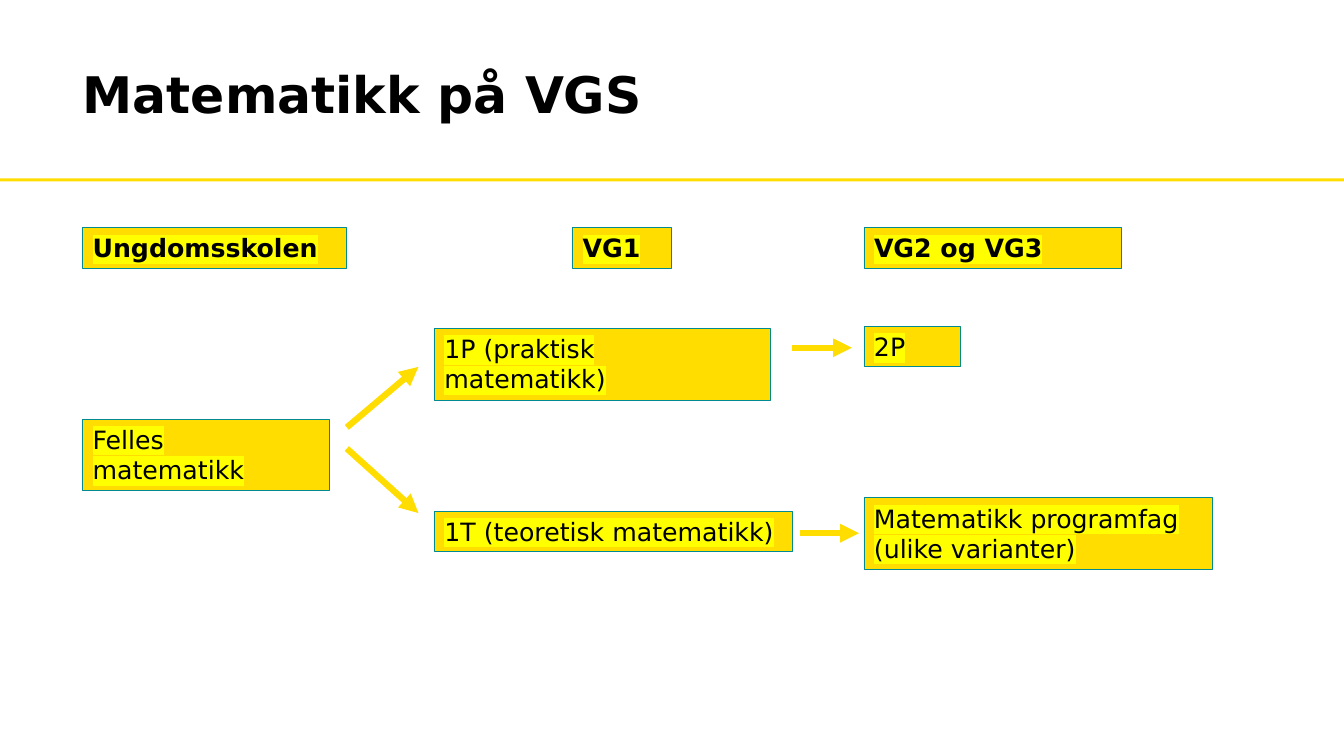
import pptx
import pptx.dml.color
import pptx.enum.shapes
import pptx.enum.text
import pptx.oxml
import pptx.oxml.ns
import pptx.util

Inches = pptx.util.Inches
Pt = pptx.util.Pt
RGBColor = pptx.dml.color.RGBColor
TextEnum = pptx.enum.text

YELLOW = RGBColor(0xFF, 0xDD, 0x00)
TEAL = RGBColor(0x01, 0x8A, 0x92)
BLACK = RGBColor(0x00, 0x00, 0x00)
HIGHLIGHT = RGBColor(0xFF, 0xFF, 0x00)


def drawing_xml(tag, content="", attributes=""):
    namespace = pptx.oxml.ns.nsdecls("a")
    return pptx.oxml.parse_xml(f"<a:{tag} {namespace} {attributes}>{content}</a:{tag}>")


class MathPathSlide:
    font_name = "DejaVu Sans"
    title_size = Pt(36)
    body_size = Pt(18)
    one_line = 0.4
    two_lines = 0.71

    def __init__(self, presentation):
        self.slide = presentation.slides.add_slide(presentation.slide_layouts[5])

    def add_text(self, paragraph, text, size, bold=False, highlight=None):
        paragraph.alignment = TextEnum.PP_ALIGN.LEFT
        run = paragraph.add_run()
        run.text = text
        run.font.size = size
        run.font.bold = bold
        run.font.color.rgb = BLACK
        if highlight is not None:
            run.font._element.append(drawing_xml("highlight", f'<a:srgbClr val="{highlight}"/>'))
        run.font.name = self.font_name

    def heading(self, text):
        title = self.slide.shapes.title
        title.left, title.top = Inches(0.82), Inches(0.36)
        title.width, title.height = Inches(10.5), Inches(1.21)
        frame = title.text_frame
        frame.margin_left = frame.margin_right = frame.margin_top = frame.margin_bottom = 0
        frame.vertical_anchor = TextEnum.MSO_ANCHOR.MIDDLE
        frame.word_wrap = True
        frame.auto_size = TextEnum.MSO_AUTO_SIZE.NONE
        frame.paragraphs[0].line_spacing = 0.9
        self.add_text(frame.paragraphs[0], text, self.title_size, bold=True)

    def rectangle(self, left, top, width, height):
        shape = self.slide.shapes.add_shape(
            pptx.enum.shapes.MSO_SHAPE.RECTANGLE,
            Inches(left), Inches(top), Inches(width), Inches(height))
        shape.shadow.inherit = False
        shape.fill.solid()
        shape.fill.fore_color.rgb = YELLOW
        return shape

    def rule(self):
        self.rectangle(0, 1.77, 13.33, 0.03).line.fill.background()

    def box(self, left, top, width, height, lines, bold=False):
        shape = self.rectangle(left, top, width, height)
        shape.line.color.rgb = TEAL
        shape.line.width = Pt(0.75)
        frame = shape.text_frame
        frame.word_wrap = True
        frame.vertical_anchor = TextEnum.MSO_ANCHOR.TOP
        frame.auto_size = TextEnum.MSO_AUTO_SIZE.SHAPE_TO_FIT_TEXT
        for index, line in enumerate(lines):
            paragraph = frame.add_paragraph() if index else frame.paragraphs[0]
            self.add_text(paragraph, line, self.body_size, bold, HIGHLIGHT)

    def arrow(self, start_x, start_y, end_x, end_y):
        connector = self.slide.shapes.add_connector(
            pptx.enum.shapes.MSO_CONNECTOR.STRAIGHT,
            Inches(start_x), Inches(start_y), Inches(end_x), Inches(end_y))
        connector.line.color.rgb = YELLOW
        connector.line.width = Pt(4.5)
        connector.line._get_or_add_ln().append(drawing_xml("tailEnd", attributes='type="triangle"'))
        connector._element.spPr.append(drawing_xml("effectLst"))


def main():
    presentation = pptx.Presentation()
    presentation.slide_width = Inches(13.33)
    presentation.slide_height = Inches(7.5)
    paths = MathPathSlide(presentation)
    paths.rule()
    paths.heading("Matematikk på VGS")

    lower_left, vg1_left, vg2_left = 0.82, 4.31, 8.57
    stages = [
        (lower_left, 2.62, "Ungdomsskolen"),
        (5.68, 0.98, "VG1"),
        (vg2_left, 2.55, "VG2 og VG3"),
    ]
    for left, width, stage in stages:
        paths.box(left, 2.26, width, paths.one_line, [stage], bold=True)

    courses = [
        (lower_left, 4.16, 2.45, paths.two_lines, ["Felles matematikk"]),
        (vg1_left, 3.26, 3.33, paths.two_lines, ["1P (praktisk matematikk)"]),
        (vg1_left, 5.07, 3.55, paths.one_line, ["1T (teoretisk matematikk)"]),
        (vg2_left, 3.24, 0.96, paths.one_line, ["2P"]),
        (vg2_left, 4.94, 3.46, paths.two_lines, ["Matematikk programfag", "(ulike varianter)"]),
    ]
    for course in courses:
        paths.box(*course)

    choices = [
        (3.44, 4.24, 4.15, 3.64),
        (3.44, 4.45, 4.15, 5.09),
        (7.86, 3.45, 8.45, 3.45),
        (7.93, 5.29, 8.52, 5.29),
    ]
    for choice in choices:
        paths.arrow(*choice)

    presentation.save("out.pptx")


if __name__ == "__main__":
    main()
